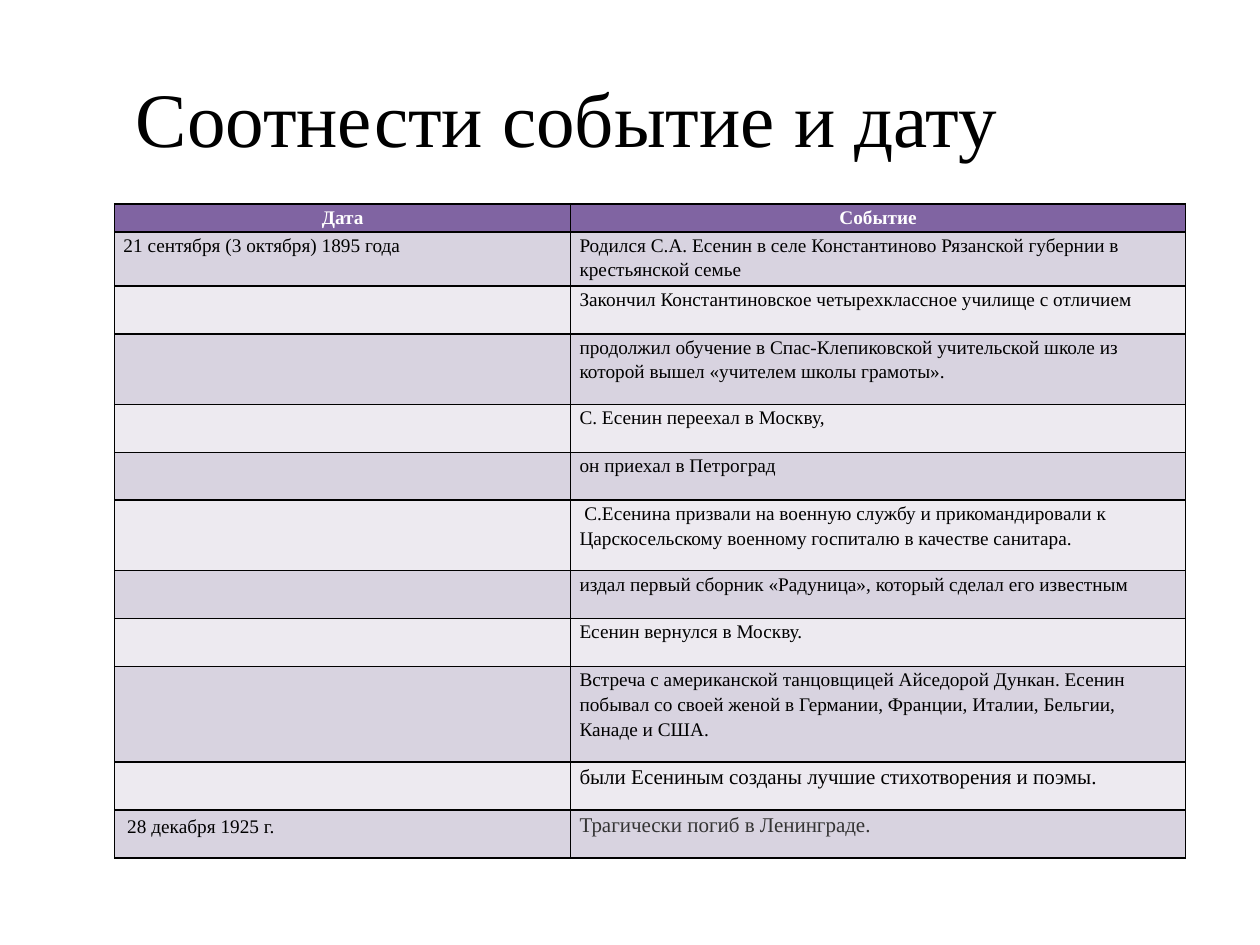
from lxml import etree
from pptx import Presentation
from pptx.dml.color import RGBColor
from pptx.enum import text
from pptx.oxml import ns
from pptx.util import Inches, Pt

FONT = "Times New Roman"
BLACK, WHITE, GREY = "000000", "FFFFFF", "333333"
HEADER, BANDS = "8064A2", ("D8D3E0", "EDEAF0")
TITLE = "Соотнести событие и дату"
COLUMNS = (3.62, 4.88)
ROWS = [
    (0.22, "Дата", "Событие"),
    (0.43, "21 сентября (3 октября) 1895 года",
     "Родился С.А. Есенин в селе Константиново Рязанской губернии в крестьянской семье"),
    (0.38, "", "Закончил Константиновское четырехклассное училище с отличием"),
    (0.56, "", "продолжил обучение в Спас-Клепиковской учительской школе из "
               "которой вышел «учителем школы грамоты»."),
    (0.38, "", "С. Есенин переехал в Москву,"),
    (0.38, "", "он приехал в Петроград"),
    (0.56, "", " С.Есенина призвали на военную службу и прикомандировали к "
               "Царскосельскому военному госпиталю в качестве санитара."),
    (0.38, "", "издал первый сборник «Радуница», который сделал его известным"),
    (0.38, "", "Есенин вернулся в Москву."),
    (0.76, "", "Встреча с американской танцовщицей Айседорой Дункан. Есенин побывал "
               "со своей женой в Германии, Франции, Италии, Бельгии, Канаде и США."),
    (0.38, "", "были Есениным созданы лучшие стихотворения и поэмы."),
    (0.38, "28 декабря 1925 г.", "Трагически погиб в Ленинграде."),
]
LAST = len(ROWS) - 1


def rgb(value):
    return RGBColor.from_string(value)


def add_run(p, words, size, color, bold=False):
    r = p.add_run()
    r.text = words
    r.font.name, r.font.size, r.font.bold = FONT, Pt(size), bold
    r.font.color.rgb = rgb(color)


def add_borders(cell):
    pr = cell._tc.get_or_add_tcPr()
    for i, side in enumerate(("lnL", "lnR", "lnT", "lnB")):
        ln = etree.Element(ns.qn(f"a:{side}"), w=str(Pt(1)))
        fill = etree.SubElement(ln, ns.qn("a:solidFill"))
        etree.SubElement(fill, ns.qn("a:srgbClr"), val=BLACK)
        pr.insert(i, ln)


def fill_cell(cell, row, col, words):
    cell.fill.solid()
    cell.fill.fore_color.rgb = rgb(BANDS[(row - 1) % 2] if row else HEADER)
    add_borders(cell)
    p = cell.text_frame.paragraphs[0]
    if (row, col) != (LAST, 0):
        cell.margin_left = cell.margin_right = Inches(0.07)
        cell.margin_top = cell.margin_bottom = 0
        p.line_spacing = 1.15
    if not words:
        return
    if row == 0:
        p.alignment = text.PP_ALIGN.CENTER
        add_run(p, words, 11, WHITE, True)
    elif col and row >= LAST - 1:
        add_run(p, words, 12, GREY if row == LAST else BLACK)
        if row == LAST:
            p.alignment = text.PP_ALIGN.JUSTIFY
    else:
        add_run(p, words, 11, BLACK)


def main():
    prs = Presentation()
    prs.slide_width, prs.slide_height = Inches(10), Inches(7.5)
    s = prs.slides.add_slide(prs.slide_layouts[5])

    title = s.shapes.title
    title.left, title.top = Inches(0), Inches(0.3)
    title.width, title.height = Inches(9), Inches(1.25)
    tf = title.text_frame
    tf.vertical_anchor = text.MSO_ANCHOR.MIDDLE
    p = tf.paragraphs[0]
    p.alignment = text.PP_ALIGN.CENTER
    add_run(p, TITLE, 44, BLACK)

    height = sum(row[0] for row in ROWS)
    table = s.shapes.add_table(len(ROWS), len(COLUMNS), Inches(0.91), Inches(1.62),
                               Inches(sum(COLUMNS)), Inches(height)).table
    for column, width in zip(table.columns, COLUMNS):
        column.width = Inches(width)
    for i, (row_height, *cells) in enumerate(ROWS):
        table.rows[i].height = Inches(row_height)
        for j, words in enumerate(cells):
            fill_cell(table.cell(i, j), i, j, words)

    prs.save("out.pptx")


if __name__ == "__main__":
    main()
